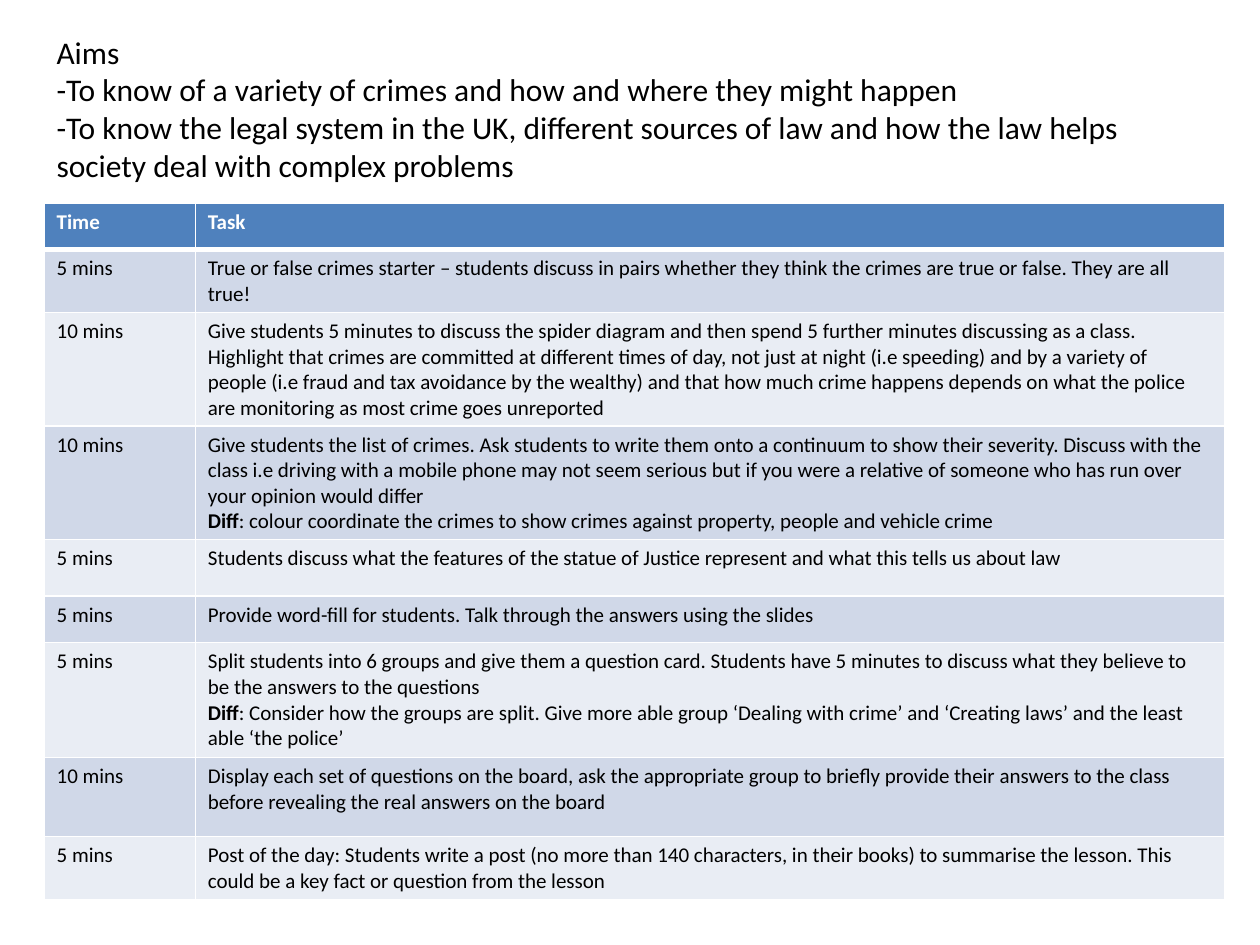
from lxml.etree import SubElement
from pptx import Presentation
from pptx.dml.color import RGBColor
from pptx.enum.text import MSO_AUTO_SIZE as AutoSize
from pptx.oxml.ns import qn
from pptx.util import Inches, Pt

COLORS = {
    "header": "4F81BD",
    "odd_row": "D0D8E8",
    "even_row": "E9EDF4",
    "white": "FFFFFF",
    "text": "000000",
}
AIMS = [
    "Aims",
    "-To know of a variety of crimes and how and where they might happen",
    "-To know the legal system in the UK, different sources of law and how the law helps society deal with complex problems",
]
LESSON_ROWS = [
    (0.37, "Time", ["Task"]),
    (0.45, "5 mins", ["True or false crimes starter – students discuss in pairs whether they think the crimes are true or false. They are all true!"]),
    (0.89, "10 mins", ["Give students 5 minutes to discuss the spider diagram and then spend 5 further minutes discussing as a class. Highlight that crimes are committed at different times of day, not just at night (i.e speeding) and by a variety of people (i.e fraud and tax avoidance by the wealthy) and that how much crime happens depends on what the police are monitoring as most crime goes unreported"]),
    (0.81, "10 mins", [
        "Give students the list of crimes. Ask students to write them onto a continuum to show their severity. Discuss with the class i.e driving with a mobile phone may not seem serious but if you were a relative of someone who has run over your opinion would differ",
        "Diff: colour coordinate the crimes to show crimes against property, people and vehicle crime",
    ]),
    (0.45, "5 mins", ["Students discuss what the features of the statue of Justice represent and what this tells us about law"]),
    (0.37, "5 mins", ["Provide word-fill for students. Talk through the answers using the slides"]),
    (0.91, "5 mins", [
        "Split students into 6 groups and give them a question card. Students have 5 minutes to discuss what they believe to be the answers to the questions",
        "Diff: Consider how the groups are split. Give more able group ‘Dealing with crime’ and ‘Creating laws’ and the least able ‘the police’",
    ]),
    (0.63, "10 mins", ["Display each set of questions on the board, ask the appropriate group to briefly provide their answers to the class before revealing the real answers on the board"]),
    (0.2, "5 mins", ["Post of the day: Students write a post (no more than 140 characters, in their books) to summarise the lesson. This could be a key fact or question from the lesson"]),
]


def write_text(frame, lines, size=12, color="text", bold=False, bold_prefix="Diff"):
    for index, line in enumerate(lines):
        paragraph = frame.paragraphs[0] if index == 0 else frame.add_paragraph()
        prefix = bold_prefix if line.startswith(bold_prefix) else ""
        for text, is_bold in ((prefix, True), (line[len(prefix):], bold)):
            if text:
                run = paragraph.add_run()
                run.text = text
                run.font.name = "Calibri"
                run.font.size = Pt(size)
                run.font.bold = is_bold
                run.font.color.rgb = RGBColor.from_string(COLORS[color])


def set_borders(cell, bottom_width):
    properties = cell._tc.get_or_add_tcPr()
    widths = {"a:lnL": 1, "a:lnR": 1, "a:lnT": 1, "a:lnB": bottom_width}
    for position, (tag, width) in enumerate(widths.items()):
        line = SubElement(properties, qn(tag), w=str(Pt(width)))
        fill = SubElement(line, qn("a:solidFill"))
        SubElement(fill, qn("a:srgbClr"), val=COLORS["white"])
        properties.insert(position, line)


def add_aims(slide, left, top, width, height):
    shape = slide.shapes.add_textbox(Inches(left), Inches(top), Inches(width), Inches(height))
    frame = shape.text_frame
    frame.word_wrap = True
    frame.auto_size = AutoSize.SHAPE_TO_FIT_TEXT
    write_text(frame, AIMS, size=18)


def add_lesson_table(slide, left, top, width, height, time_width=1.2):
    shape = slide.shapes.add_table(
        len(LESSON_ROWS), 2, Inches(left), Inches(top), Inches(width), Inches(height)
    )
    table = shape.table
    table.columns[0].width = Inches(time_width)
    table.columns[1].width = Inches(width - time_width)
    for row, (row_height, time, task) in enumerate(LESSON_ROWS):
        table.rows[row].height = Inches(row_height)
        is_header = row == 0
        fill = "header" if is_header else "odd_row" if row % 2 else "even_row"
        for column, lines in enumerate(([time], task)):
            cell = table.cell(row, column)
            cell.fill.solid()
            cell.fill.fore_color.rgb = RGBColor.from_string(COLORS[fill])
            set_borders(cell, bottom_width=3 if is_header else 1)
            write_text(cell.text_frame, lines, color="white" if is_header else "text", bold=is_header)


def main():
    presentation = Presentation()
    presentation.slide_width = Inches(10)
    presentation.slide_height = Inches(7.5)
    slide = presentation.slides.add_slide(presentation.slide_layouts[6])
    add_aims(slide, 0.35, 0.21, 8.98, 1.31)
    add_lesson_table(slide, 0.35, 1.61, 9.37, sum(row[0] for row in LESSON_ROWS))
    presentation.save("out.pptx")


if __name__ == "__main__":
    main()
